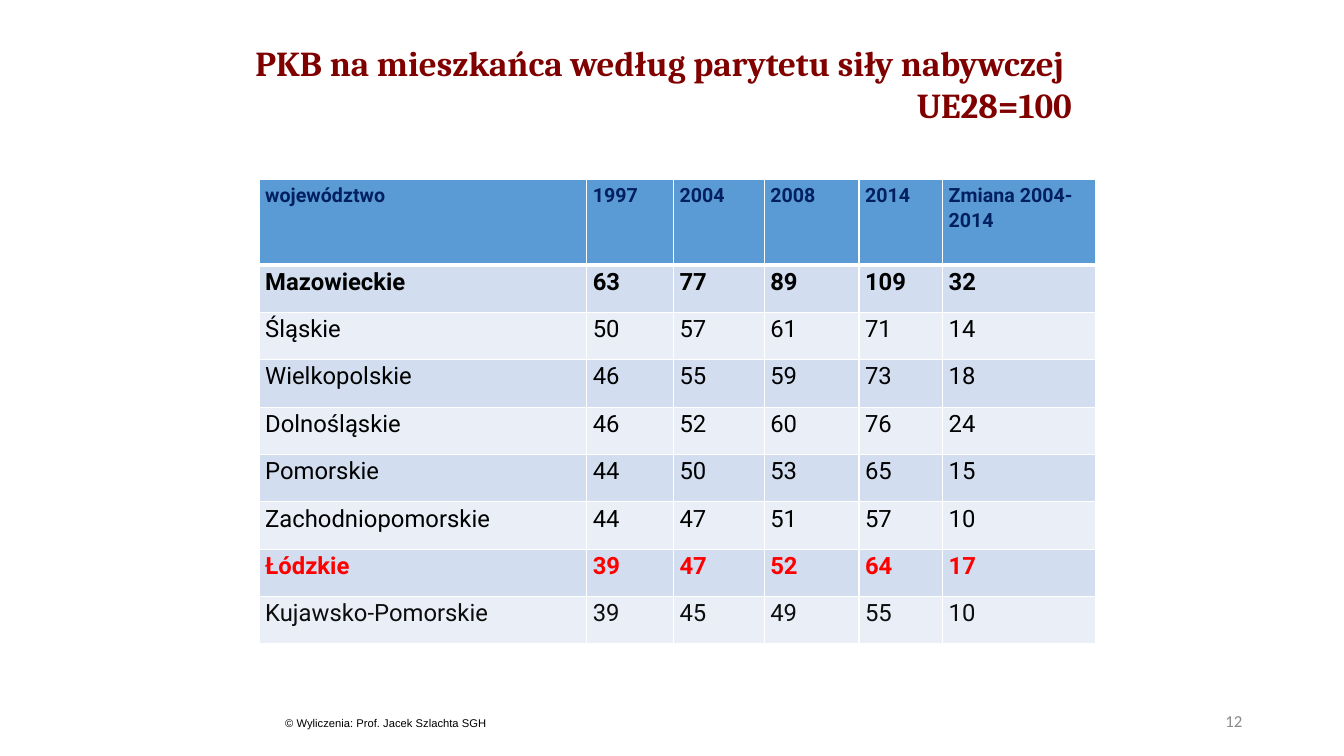
from pptx import Presentation
from pptx.dml.color import RGBColor
from pptx.enum.text import MSO_ANCHOR, MSO_AUTO_SIZE, PP_ALIGN
from pptx.oxml import parse_xml
from pptx.oxml.ns import nsdecls
from pptx.util import Inches, Pt

COLORS = {
    "title": "800000", "header": "5B9BD5", "header_text": "002060",
    "band_dark": "D2DEEF", "band_light": "EAEFF7", "border": "FFFFFF",
    "text": "000000", "soft_text": "0D0D0D", "highlight": "FF0000",
    "number": "898989",
}
HEADER = ["województwo", "1997", "2004", "2008", "2014", "Zmiana 2004-2014"]
REGIONS = [
    ("Mazowieckie", 63, 77, 89, 109, 32),
    ("Śląskie", 50, 57, 61, 71, 14),
    ("Wielkopolskie", 46, 55, 59, 73, 18),
    ("Dolnośląskie", 46, 52, 60, 76, 24),
    ("Pomorskie", 44, 50, 53, 65, 15),
    ("Zachodniopomorskie", 44, 47, 51, 57, 10),
    ("Łódzkie", 39, 47, 52, 64, 17),
    ("Kujawsko-Pomorskie", 39, 45, 49, 55, 10),
]
# Rows that differ from plain black text: (colour, bold)
ROW_STYLES = {
    "Mazowieckie": ("text", True),
    "Łódzkie": ("highlight", True),
    "Kujawsko-Pomorskie": ("soft_text", False),
}
COL_WIDTHS = [3.25, 0.86, 0.9, 0.94, 0.83, 1.52]
HEADER_HEIGHT, ROW_HEIGHT = 0.85, 0.47


def rgb(name):
    return RGBColor.from_string(COLORS[name])


def add_run(p, text, size, font, color, bold=False):
    r = p.add_run()
    r.text = text
    r.font.size = Pt(size)
    r.font.name = font
    r.font.bold = bold
    r.font.color.rgb = rgb(color)


def set_margins(target, side, top):
    target.margin_left = target.margin_right = Inches(side)
    target.margin_top = target.margin_bottom = Inches(top)


def add_title(s, x, y, w, h):
    sp = s.shapes.title
    sp.left, sp.top, sp.width, sp.height = map(Inches, (x, y, w, h))
    tf = sp.text_frame
    tf.word_wrap = True
    tf.auto_size = MSO_AUTO_SIZE.NONE
    tf.vertical_anchor = MSO_ANCHOR.MIDDLE
    set_margins(tf, 0.07, 0.04)
    lines = ["PKB na mieszkańca według parytetu siły nabywczej ", "UE28=100"]
    for i, line in enumerate(lines):
        p = tf.add_paragraph() if i else tf.paragraphs[0]
        p.alignment = PP_ALIGN.RIGHT
        p.space_before = Pt(0)
        p.line_spacing = 1.0
        add_run(p, line, 25, "Cambria", "title", True)


def set_borders(cell, bottom):
    tc_pr = cell._tc.get_or_add_tcPr()
    widths = {"lnL": 1, "lnR": 1, "lnT": 1, "lnB": bottom}
    for i, (side, width) in enumerate(widths.items()):
        tc_pr.insert(i, parse_xml(
            f'<a:{side} {nsdecls("a")} w="{Pt(width)}"><a:solidFill>'
            f'<a:srgbClr val="{COLORS["border"]}"/></a:solidFill></a:{side}>'))


def fill_cell(cell, text, size, color, bold, fill, bottom=1):
    cell.fill.solid()
    cell.fill.fore_color.rgb = rgb(fill)
    set_margins(cell, 0.06, 0.03)
    set_borders(cell, bottom)
    p = cell.text_frame.paragraphs[0]
    add_run(p, str(text), size, "Roboto", color, bold)
    return p


def add_gdp_table(s, x, y):
    height = HEADER_HEIGHT + ROW_HEIGHT * len(REGIONS)
    table = s.shapes.add_table(
        len(REGIONS) + 1, len(HEADER), Inches(x), Inches(y),
        Inches(sum(COL_WIDTHS)), Inches(height)).table
    for col, width in zip(table.columns, COL_WIDTHS):
        col.width = Inches(width)
    table.rows[0].height = Inches(HEADER_HEIGHT)
    for c, text in enumerate(HEADER):
        p = fill_cell(table.cell(0, c), text, 14, "header_text", True, "header", 3)
        p.line_spacing = 1.07
    for r, region in enumerate(REGIONS, 1):
        table.rows[r].height = Inches(ROW_HEIGHT)
        color, bold = ROW_STYLES.get(region[0], ("text", False))
        fill = "band_dark" if r % 2 else "band_light"
        for c, value in enumerate(region):
            fill_cell(table.cell(r, c), value, 17, color, bold, fill)


def add_slide_number(s, x, y, w, h):
    tf = s.shapes.add_textbox(*map(Inches, (x, y, w, h))).text_frame
    tf.word_wrap = True
    tf.vertical_anchor = MSO_ANCHOR.MIDDLE
    p = tf.paragraphs[0]
    p.alignment = PP_ALIGN.RIGHT
    add_run(p, "12", 12, "Calibri", "number")


def add_credit(s, x, y, w, h):
    tf = s.shapes.add_textbox(*map(Inches, (x, y, w, h))).text_frame
    tf.word_wrap = False
    tf.auto_size = MSO_AUTO_SIZE.SHAPE_TO_FIT_TEXT
    add_run(tf.paragraphs[0], "© Wyliczenia: Prof. Jacek Szlachta SGH",
            8, "Arial", "text")


def main():
    prs = Presentation()
    prs.slide_width, prs.slide_height = Inches(13.33), Inches(7.5)
    s = prs.slides.add_slide(prs.slide_layouts[5])
    add_title(s, 2.29, 0.36, 8.41, 0.94)
    add_gdp_table(s, 2.57, 1.78)
    add_slide_number(s, 9.42, 6.95, 3, 0.4)
    add_credit(s, 2.73, 7.06, 2.28, 0.24)
    prs.save("out.pptx")


if __name__ == "__main__":
    main()
